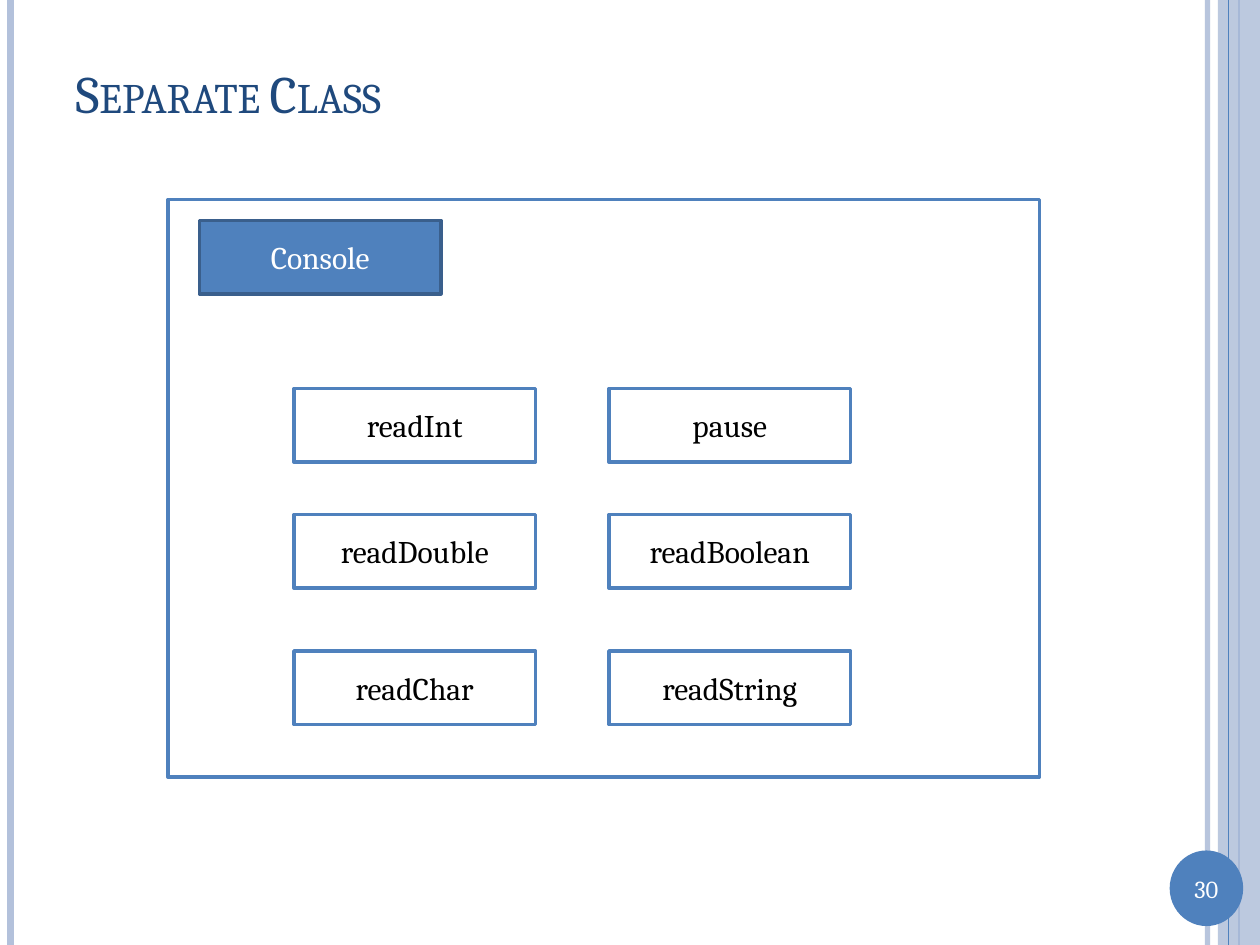
import pptx
import pptx.util
import pptx.dml.color
import pptx.enum.shapes
import pptx.enum.text
import pptx.oxml
import pptx.oxml.ns
from dataclasses import dataclass

KINDS = pptx.enum.shapes.MSO_SHAPE
ALIGN = pptx.enum.text.PP_ALIGN
ANCHOR = pptx.enum.text.MSO_ANCHOR
FIT = pptx.enum.text.MSO_AUTO_SIZE
UNIT = 1 / 12  # the grid step in inches
HIGH = 90      # slide height in grid steps


@dataclass(frozen=True)
class Theme:
    font: str = "Cambria"
    blue: str = "4F81BD"
    edge: str = "3A5F8C"
    pale: str = "B3C1DB"
    navy: str = "1F497D"
    white: str = "FFFFFF"
    black: str = "000000"
    head: int = 30
    body: int = 18
    page: int = 14
    line: int = 2


THEME = Theme()


def grid(*steps):
    return [pptx.util.Inches(step * UNIT) for step in steps]


def color(code):
    return pptx.dml.color.RGBColor.from_string(code)


def fade(item, share):
    """Set the opacity, in percent, of the colours on an item."""
    for node in item._element.spPr.iter(pptx.oxml.ns.qn("a:srgbClr")):
        alpha = pptx.oxml.parse_xml(
            f'<a:alpha {pptx.oxml.ns.nsdecls("a")} val="{share * 1000}"/>')
        node.append(alpha)


def write(frame, text, size, code, align=ALIGN.CENTER):
    form = {"word_wrap": True, "auto_size": FIT.NONE,
            "vertical_anchor": ANCHOR.MIDDLE}
    for name, value in form.items():
        setattr(frame, name, value)
    para = frame.paragraphs[0]
    para.alignment = align
    run = para.add_run()
    run.text = text
    form = {"name": THEME.font, "size": pptx.util.Pt(size)}
    for name, value in form.items():
        setattr(run.font, name, value)
    run.font.color.rgb = color(code)
    return run


def rule(slide, col, code, width):
    """Draw a line down the full height of the slide."""
    line = slide.shapes.add_connector(
        pptx.enum.shapes.MSO_CONNECTOR.STRAIGHT, *grid(col, 0, col, HIGH))
    line.line.color.rgb = color(code)
    line.line.width = pptx.util.Pt(width)
    line._element.spPr.append(pptx.oxml.parse_xml(
        f'<a:effectLst {pptx.oxml.ns.nsdecls("a")}/>'))
    return line


def shape(slide, place, fill, edge=None, kind=KINDS.RECTANGLE):
    item = slide.shapes.add_shape(kind, *grid(*place))
    item.shadow.inherit = False
    item.fill.solid()
    item.fill.fore_color.rgb = color(fill)
    if edge:
        item.line.color.rgb = color(edge)
        item.line.width = pptx.util.Pt(THEME.line)
    else:
        item.line.fill.background()
    return item


def label(slide, col, row, text, fill, edge, ink):
    box = shape(slide, (col, row, 23, 7), fill, edge)
    write(box.text_frame, text, THEME.body, ink)


def frame(slide):
    """Draw the side bands and the page number."""
    fade(rule(slide, 115, THEME.pale, 3), 93)
    rule(slide, 1, THEME.pale, 4.5)
    rule(slide, 118, THEME.blue, 1.5)
    fade(shape(slide, (116, 0, 4, HIGH), THEME.pale), 87)
    rule(slide, 117, THEME.blue, 0.75)
    shape(slide, (111.4, 81, 7, 7.2), THEME.blue, kind=KINDS.OVAL)
    page = slide.shapes.add_textbox(*grid(111.4, 82.6, 7, 4))
    write(page.text_frame, "30", THEME.page, THEME.white)


def title(slide, text):
    head = slide.shapes.title
    spots = ("left", "top", "width", "height")
    for name, value in zip(spots, grid(6, 3.6, 110, 10.4)):
        setattr(head, name, value)
    run = write(head.text_frame, text, THEME.head, THEME.navy, ALIGN.LEFT)
    run.font._element.set("cap", "small")


def main():
    deck = pptx.Presentation()
    deck.slide_width, deck.slide_height = grid(120, HIGH)
    slide = deck.slides.add_slide(deck.slide_layouts[5])
    frame(slide)
    title(slide, "Separate Class")

    # The class and its name
    shape(slide, (16, 19, 83, 55), THEME.white, THEME.blue)
    label(slide, 19, 21, "Console", THEME.blue, THEME.edge, THEME.white)

    # Its methods, in two columns
    rows = {37: ("readInt", "pause"),
            49: ("readDouble", "readBoolean"),
            62: ("readChar", "readString")}
    for row, names in rows.items():
        for col, name in zip((28, 58), names):
            label(slide, col, row, name, THEME.white, THEME.blue, THEME.black)

    deck.save("out.pptx")


if __name__ == "__main__":
    main()
